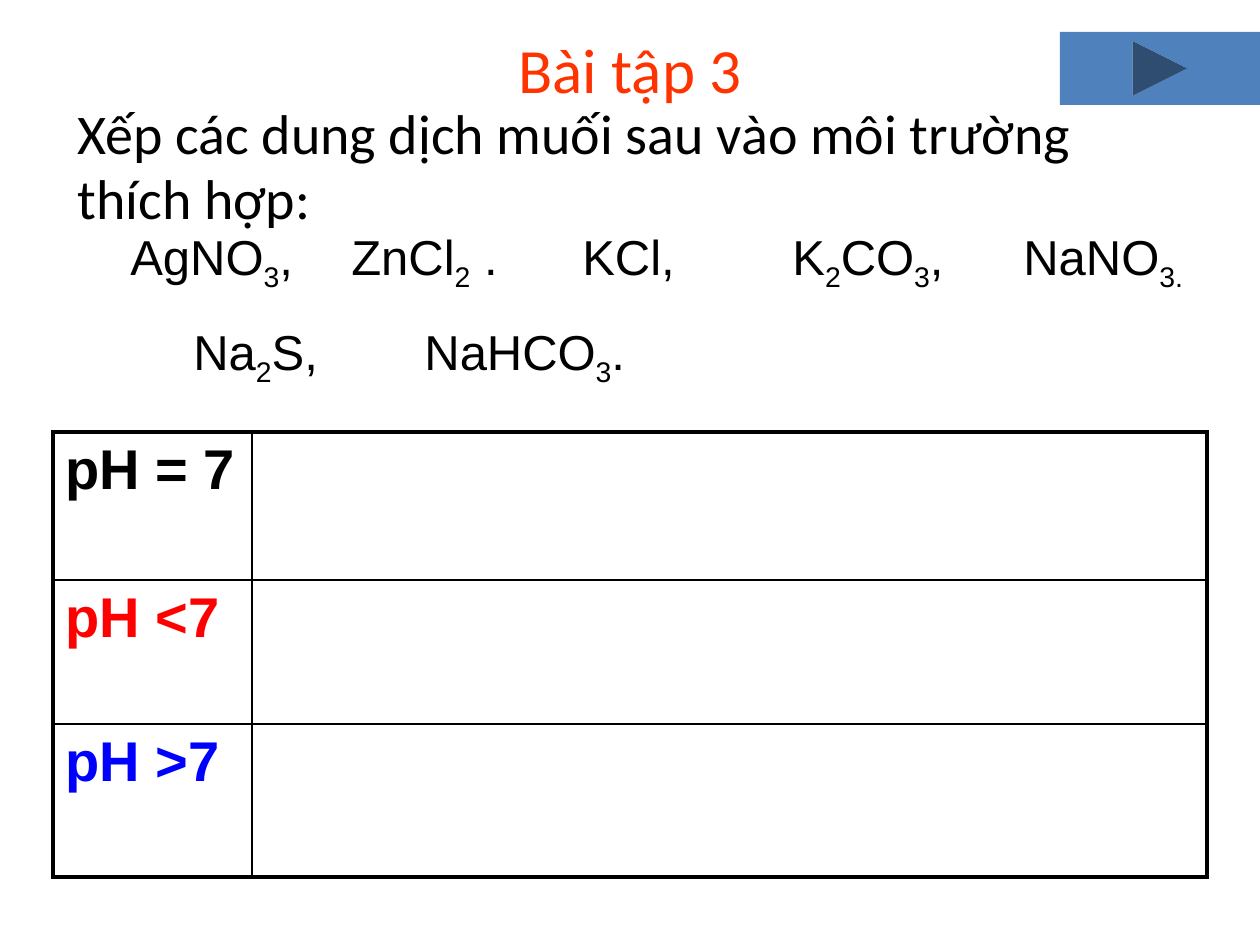
import lxml.etree
import pptx
import pptx.dml.color
import pptx.enum.shapes
import pptx.enum.text
import pptx.oxml.ns
import pptx.util

ALIGN = pptx.enum.text.PP_ALIGN
ANCHOR = pptx.enum.text.MSO_ANCHOR
TITLE = {"name": "Calibri", "size": 36, "color": "FF3300"}
BODY = {"name": "Calibri", "size": 32, "color": "000000"}
FORMULA = {"name": "Arial", "size": 28, "color": "000000"}
HANGING = {"marL": 142, "indent": -87}


def px(n):
    return pptx.util.Emu(round(n * 914400 / 126))


def rgb(value):
    return pptx.dml.color.RGBColor.from_string(value)


class SlideBuilder:
    """Draws styled elements on the current slide, with lengths in px."""

    def __init__(self, prs):
        self.slide = prs.slides.add_slide(prs.slide_layouts[6])

    def paragraph(self, p, text, style, hanging=False, **fmt):
        for name, value in fmt.items():
            setattr(p, name, value)
        if hanging:
            pPr = p._p.get_or_add_pPr()
            for name, value in HANGING.items():
                pPr.set(name, str(px(value)))
        for i, part in enumerate(text.split("_")):
            if not part:
                continue
            r = p.add_run()
            r.text = part
            font = {"name": style["name"], "size": pptx.util.Pt(style["size"]),
                    "bold": style.get("bold", False)}
            for name, value in font.items():
                setattr(r.font, name, value)
            r.font.color.rgb = rgb(style["color"])
            if i % 2:
                r._r.get_or_add_rPr().set("baseline", "-25000")

    def text(self, box, lines, style, anchor=ANCHOR.TOP, **fmt):
        tf = self.slide.shapes.add_textbox(*map(px, box)).text_frame
        for name, value in {"word_wrap": True, "vertical_anchor": anchor}.items():
            setattr(tf, name, value)
        for i, line in enumerate(lines):
            p = tf.add_paragraph() if i else tf.paragraphs[0]
            self.paragraph(p, line, style, **fmt)

    def border(self, cell, widths):
        tcPr = cell._tc.get_or_add_tcPr()
        for i, (side, width) in enumerate(widths.items()):
            ln = lxml.etree.Element(pptx.oxml.ns.qn(f"a:ln{side}"),
                                    w=str(pptx.util.Pt(width)))
            fill = lxml.etree.SubElement(ln, pptx.oxml.ns.qn("a:solidFill"))
            lxml.etree.SubElement(fill, pptx.oxml.ns.qn("a:srgbClr"), val="000000")
            tcPr.insert(i, ln)

    def table(self, left, top, widths, heights, labels):
        rows, cols = len(heights), len(widths)
        table = self.slide.shapes.add_table(
            rows, cols, px(left), px(top), px(sum(widths)), px(sum(heights))).table
        table.first_row = table.horz_banding = False
        for column, width in zip(table.columns, widths):
            column.width = px(width)
        for row, height in zip(table.rows, heights):
            row.height = px(height)
        for y in range(rows):
            for x in range(cols):
                cell = table.cell(y, x)
                cell.fill.background()
                edges = {"L": x == 0, "R": x == cols - 1,
                         "T": y == 0, "B": y == rows - 1}
                self.border(cell, {k: 2.25 if v else 1 for k, v in edges.items()})
        for y, (label, color) in enumerate(labels):
            style = {"name": "Arial", "size": 32, "bold": True, "color": color}
            self.paragraph(table.cell(y, 0).text_frame.paragraphs[0], label, style,
                           space_before=pptx.util.Pt(6.4))

    def button(self, box, color):
        kind = pptx.enum.shapes.MSO_SHAPE.ACTION_BUTTON_FORWARD_OR_NEXT
        sp = self.slide.shapes.add_shape(kind, *map(px, box))
        sp.shadow.inherit = False
        sp.fill.solid()
        sp.fill.fore_color.rgb = rgb(color)
        sp.line.fill.background()


def main():
    prs = pptx.Presentation()
    prs.slide_width, prs.slide_height = px(1260), px(945)
    s = SlideBuilder(prs)
    s.text((63, 21, 1134, 95), ["Bài tập 3"], TITLE, ANCHOR.MIDDLE,
           alignment=ALIGN.CENTER)
    s.text((10, 105, 1218, 84),
           ["Xếp các dung dịch muối sau vào môi trường", "thích hợp:"], BODY,
           hanging=True, line_spacing=0.8, space_before=pptx.util.Pt(6.4))
    s.table(53, 432, (199, 955), (148, 144, 153),
            (("pH = 7", "000000"), ("pH <7", "FF0000"), ("pH >7", "0000FF")))
    salts = {
        220: ((63, 252, "AgNO_3_,"), (284, 252, "ZnCl_2_ ."), (515, 252, "KCl,"),
              (725, 262, "K_2_CO_3_,"), (956, 262, "NaNO_3._")),
        315: ((126, 252, "Na_2_S,"), (357, 294, "NaHCO_3_.")),
    }
    for top, row in salts.items():
        for left, width, salt in row:
            s.text((left, top, width, 84), [salt], FORMULA, hanging=True,
                   space_before=pptx.util.Pt(5.6))
    s.button((1060, 32, 200, 73), "4F81BD")
    prs.save("out.pptx")


if __name__ == "__main__":
    main()
